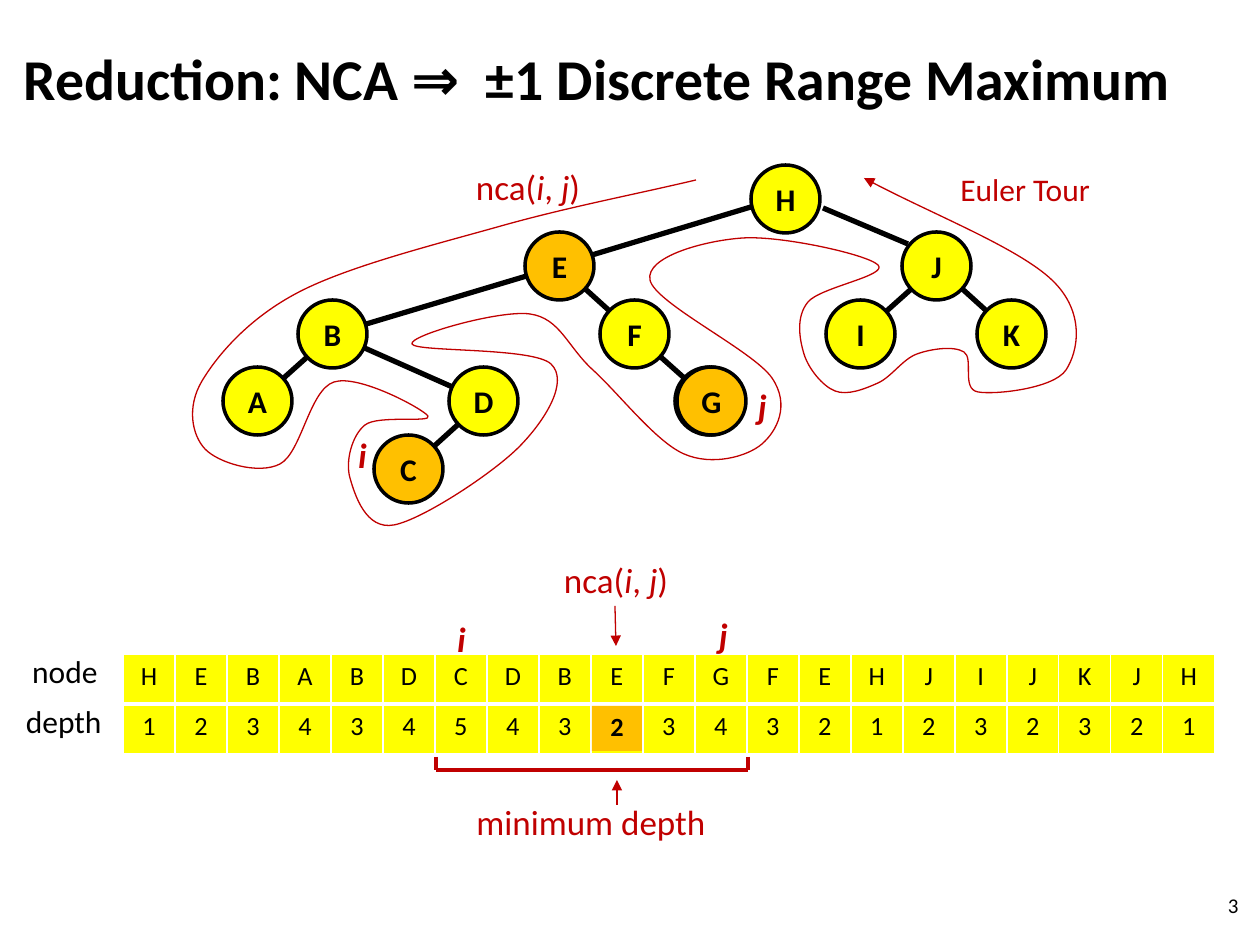
from lxml.etree import Element, SubElement
from pptx import Presentation
from pptx.dml.color import RGBColor
from pptx.enum.shapes import MSO_CONNECTOR, MSO_SHAPE
from pptx.enum.text import MSO_ANCHOR as Anchor, MSO_AUTO_SIZE, PP_ALIGN as Align
from pptx.oxml.ns import qn
from pptx.util import Pt

PX = 914400 // 126
BLACK, WHITE, RED, YELLOW, ORANGE = "000000", "FFFFFF", "C00000", "FFFF00", "FFC000"
colour = RGBColor.from_string


def write(frame, text, size, ink=BLACK, align=Align.CENTER, bold=False):
    paragraph = frame.paragraphs[0]
    paragraph.alignment = align
    for index, part in enumerate(text.split("*")):
        if part:
            run = paragraph.add_run()
            run.text = part
            run.font.name = "Calibri"
            run.font.size = Pt(size)
            run.font.bold = bold
            run.font.italic = index % 2 == 1
            run.font.color.rgb = colour(ink)


def draw_line(start, end, ink, width, arrow=False):
    ends = [value * PX for value in (*start, *end)]
    line = slide.shapes.add_connector(MSO_CONNECTOR.STRAIGHT, *ends)
    line.line.color.rgb = colour(ink)
    line.line.width = Pt(width)
    properties = line.element.spPr
    SubElement(properties, qn("a:effectLst"))
    if arrow:
        SubElement(properties.find(qn("a:ln")), qn("a:tailEnd"), type="triangle")


deck = Presentation()
deck.slide_width, deck.slide_height = 1260 * PX, 945 * PX
slide = deck.slides.add_slide(deck.slide_layouts[5])

title = slide.shapes.title
title.left, title.top, title.width, title.height = 11 * PX, 37 * PX, 1249 * PX, 89 * PX
title.text_frame.auto_size = MSO_AUTO_SIZE.NONE
title.text_frame.vertical_anchor = Anchor.MIDDLE
title.text_frame.paragraphs[0].line_spacing = 0.9
write(title.text_frame, "Reduction: NCA ⇒  ±1 Discrete Range Maximum", 33,
      align=Align.LEFT, bold=True)

depths = dict(zip("ABCDEFGHIJK", "43542341323"))
centres = {
    node: (258 + round(75.4 * column), 199 + round(67.4 * (int(depth) - 1)))
    for column, (node, depth) in enumerate(depths.items())
}

for parent, child in ("BA", "BD", "DC", "JI", "JK", "EB", "EF", "FG"):
    draw_line(centres[parent], centres[child], BLACK, 3)
draw_line((823, 208), (908, 244), BLACK, 3)
draw_line((751, 207), (592, 255), BLACK, 3)

tree_nodes = [(node, YELLOW, 0) for node in "ABDFJGKIH"]
tree_nodes += [("E", ORANGE, 0), ("G", ORANGE, 2), ("C", ORANGE, 0)]
for node, fill, shift in tree_nodes:
    x, y = centres[node]
    circle = slide.shapes.add_shape(
        MSO_SHAPE.OVAL, (x - 35 + shift) * PX, (y - 34) * PX, 69 * PX, 68 * PX)
    circle.shadow.inherit = False
    circle.fill.solid()
    circle.fill.fore_color.rgb = colour(fill)
    circle.line.color.rgb = colour(BLACK)
    circle.line.width = Pt(2)
    circle.text_frame.vertical_anchor = Anchor.MIDDLE
    write(circle.text_frame, node, 18, bold=True)

tour_stops = [
    (696, 180), (501, 226), (299, 292), (202, 381), (205, 449), (280, 464),
    (334, 382), (428, 416), (365, 425), (350, 478), (394, 525), (520, 446),
    (551, 364), (412, 344), (530, 314), (593, 370), (684, 454), (762, 444),
    (772, 378), (650, 280), (743, 238), (878, 265), (808, 302), (804, 354),
    (835, 391), (878, 383), (917, 354), (964, 352), (978, 392), (1066, 370),
    (1052, 280), (864, 178),
]
stops = [(x * PX, y * PX) for x, y in tour_stops]
builder = slide.shapes.build_freeform(*stops[0])
builder.add_line_segments(stops[1:], close=False)
tour = builder.convert_to_shape()
tour.shadow.inherit = False
tour.fill.background()
tour.line.color.rgb = colour(RED)
tour.line.width = Pt(0.75)
SubElement(tour.element.spPr.find(qn("a:ln")), qn("a:tailEnd"), type="triangle")

outline = next(tour.element.iter(qn("a:path")))
knots = [(int(p.get("x")), int(p.get("y"))) for p in outline.iter(qn("a:pt"))]
before = tuple(2 * a - b for a, b in zip(knots[0], knots[1]))
after = tuple(2 * a - b for a, b in zip(knots[-1], knots[-2]))
knots = [before, *knots, after]
for index, segment in enumerate(outline.findall(qn("a:lnTo"))):
    previous, start, end, following = knots[index:index + 4]
    leave = [s + (e - p) / 6 for p, s, e in zip(previous, start, end)]
    arrive = [e - (f - s) / 6 for s, e, f in zip(start, end, following)]
    curve = Element(qn("a:cubicBezTo"))
    for x, y in (leave, arrive, end):
        SubElement(curve, qn("a:pt"), x=str(round(x)), y=str(round(y)))
    outline.replace(segment, curve)

visits = "HEBABDCDBEFGFEHJIJKJH"
rows = [visits, [depths[node] for node in visits]]
table = slide.shapes.add_table(
    2, len(visits), 123 * PX, 654 * PX, len(visits) * 52 * PX, 100 * PX).table
table.first_row = False
table.horz_banding = False
for column in table.columns:
    column.width = 52 * PX
borders = [{"L": 1, "R": 1, "T": 1, "B": 3}, {"L": 1, "R": 1, "T": 3, "B": 1}]
for row, values in enumerate(rows):
    table.rows[row].height = 50 * PX
    for column, value in enumerate(values):
        cell = table.cell(row, column)
        write(cell.text_frame, value, 15)
        cell_properties = cell._tc.get_or_add_tcPr()
        for side, width in borders[row].items():
            border = SubElement(cell_properties, qn(f"a:ln{side}"), w=str(Pt(width)))
            SubElement(SubElement(border, qn("a:solidFill")), qn("a:srgbClr"), val=WHITE)
        cell.fill.solid()
        cell.fill.fore_color.rgb = colour(YELLOW)

minimum = slide.shapes.add_shape(MSO_SHAPE.RECTANGLE, 592 * PX, 706 * PX, 50 * PX, 45 * PX)
minimum.shadow.inherit = False
minimum.fill.solid()
minimum.fill.fore_color.rgb = colour(ORANGE)
minimum.line.fill.background()
minimum.text_frame.vertical_anchor = Anchor.TOP
minimum.text_frame.margin_top = 4 * PX
write(minimum.text_frame, "2", 15, bold=True)

labels = [
    ("Euler Tour", 948, 164, 238, 50, 18, RED, Align.LEFT, False),
    ("node", 15, 646, 95, 50, 18, BLACK, Align.RIGHT, False),
    ("depth", 0, 696, 114, 50, 18, BLACK, Align.RIGHT, False),
    ("*i*", 333, 427, 59, 55, 20, RED, Align.CENTER, True),
    ("*j*", 733, 378, 59, 55, 20, RED, Align.CENTER, True),
    ("*i*", 432, 611, 59, 55, 20, RED, Align.CENTER, True),
    ("*j*", 694, 607, 59, 55, 20, RED, Align.CENTER, True),
    ("nca(*i*, *j*)", 402, 159, 252, 55, 20, RED, Align.CENTER, False),
    ("nca(*i*, *j*)", 442, 552, 348, 55, 20, RED, Align.CENTER, False),
    ("minimum depth", 417, 794, 348, 55, 20, RED, Align.CENTER, False),
    ("3", 958, 880, 293, 50, 12, BLACK, Align.RIGHT, False),
]
for text, x, y, width, height, size, ink, align, bold in labels:
    label = slide.shapes.add_textbox(x * PX, y * PX, width * PX, height * PX)
    label.text_frame.word_wrap = True
    label.text_frame.vertical_anchor = Anchor.MIDDLE
    write(label.text_frame, text, size, ink, align, bold)

draw_line((617, 805), (617, 780), RED, 0.75, arrow=True)
draw_line((615, 606), (616, 646), RED, 0.75, arrow=True)
draw_line((436, 770), (748, 770), RED, 2.25)
for x in (436, 748):
    draw_line((x, 757), (x, 770), RED, 2.25)

deck.save("out.pptx")
